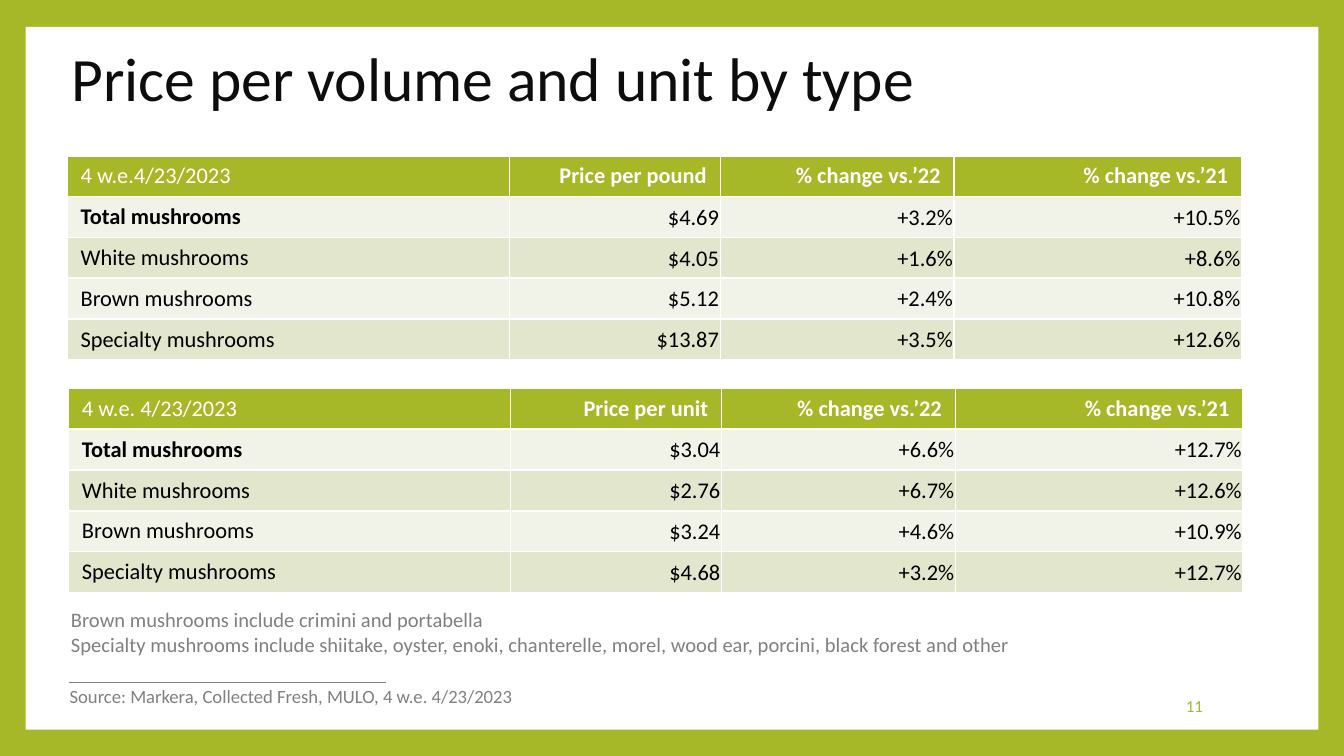
"""Build the slide comparing mushroom prices per pound and per unit."""
import pptx
import pptx.util
import pptx.dml.color
import pptx.enum.shapes
import pptx.enum.text
import pptx.oxml
import pptx.oxml.ns

Inches, Pt = pptx.util.Inches, pptx.util.Pt
ALIGN, ANCHOR = pptx.enum.text.PP_ALIGN, pptx.enum.text.MSO_ANCHOR
AUTO_SIZE = pptx.enum.text.MSO_AUTO_SIZE

THEME = {
    "font": "Calibri",
    "green": "A6B727", "white": "FFFFFF", "black": "000000",
    "ink": "0D0D0D", "gray": "808080", "bands": ("F1F3E8", "E1E6CD"),
    "title": 33, "table": 12, "note": 11, "source": 10, "number": 9,
}

TITLE = "Price per volume and unit by type"
CHANGES = ["% change vs.’22", "% change vs.’21"]
TABLES = [
    (0.5, 1.16, [
        ["4 w.e.4/23/2023", "Price per pound", *CHANGES],
        ["Total mushrooms", "$4.69", "+3.2%", "+10.5%"],
        ["White mushrooms", "$4.05", "+1.6%", "+8.6%"],
        ["Brown mushrooms", "$5.12", "+2.4%", "+10.8%"],
        ["Specialty mushrooms", "$13.87", "+3.5%", "+12.6%"],
    ]),
    (0.51, 2.89, [
        ["4 w.e. 4/23/2023", "Price per unit", *CHANGES],
        ["Total mushrooms", "$3.04", "+6.6%", "+12.7%"],
        ["White mushrooms", "$2.76", "+6.7%", "+12.6%"],
        ["Brown mushrooms", "$3.24", "+4.6%", "+10.9%"],
        ["Specialty mushrooms", "$4.68", "+3.2%", "+12.7%"],
    ]),
]
COLUMNS = [3.29, 1.57, 1.74, 2.14]
ROW_HEIGHT = 0.3
NOTES = [
    "Brown mushrooms include crimini and portabella",
    "Specialty mushrooms include shiitake, oyster, enoki, chanterelle, morel, "
    "wood ear, porcini, black forest and other",
]
SOURCE = "Source: Markera, Collected Fresh, MULO, 4 w.e. 4/23/2023"
PAGE = "11"


def rgb(name):
    return pptx.dml.color.RGBColor.from_string(THEME.get(name, name))


def paint(fill, color):
    fill.solid()
    fill.fore_color.rgb = rgb(color)


def style(p, size, color, align=ALIGN.LEFT, bold=False):
    p.alignment = align
    p.font.name = THEME["font"]
    p.font.size = Pt(THEME[size])
    p.font.bold = bold
    p.font.color.rgb = rgb(color)


def add_text(slide, box, lines, size, color, align=ALIGN.LEFT, wrap=False, anchor=ANCHOR.TOP):
    tf = slide.shapes.add_textbox(*map(Inches, box)).text_frame
    tf.word_wrap = wrap
    tf.auto_size = AUTO_SIZE.NONE if wrap else AUTO_SIZE.SHAPE_TO_FIT_TEXT
    tf.vertical_anchor = anchor
    tf.text = "\n".join(lines)
    for p in tf.paragraphs:
        style(p, size, color, align)


def add_borders(cell):
    tc_pr = cell._tc.get_or_add_tcPr()
    for side in "LRTB":
        tc_pr.append(pptx.oxml.parse_xml(
            f'<a:ln{side} {pptx.oxml.ns.nsdecls("a")} w="{Pt(1)}"><a:solidFill>'
            f'<a:srgbClr val="{THEME["white"]}"/></a:solidFill></a:ln{side}>'))


def add_price_table(slide, left, top, rows):
    table = slide.shapes.add_table(
        len(rows), len(COLUMNS), Inches(left), Inches(top),
        Inches(sum(COLUMNS)), Inches(ROW_HEIGHT * len(rows))).table
    for column, width in zip(table.columns, COLUMNS):
        column.width = Inches(width)
    for i, row in enumerate(rows):
        for j, text in enumerate(row):
            cell = table.cell(i, j)
            header, label = i == 0, j == 0
            add_borders(cell)
            paint(cell.fill, "green" if header else THEME["bands"][(i - 1) % 2])
            cell.vertical_anchor = ANCHOR.TOP if header else ANCHOR.MIDDLE
            if not header and not label:
                cell.margin_left = cell.margin_right = cell.margin_top = Inches(0.01)
                cell.margin_bottom = 0
            cell.text = text
            style(cell.text_frame.paragraphs[0], "table", "white" if header else "black",
                  ALIGN.LEFT if label else ALIGN.RIGHT,
                  bold=(header and not label) or (i == 1 and label))


def main():
    prs = pptx.Presentation()
    prs.slide_width = Inches(10)
    prs.slide_height = prs.slide_width * 9 // 16
    slide = prs.slides.add_slide(prs.slide_layouts[5])
    paint(slide.background.fill, "green")

    panel = slide.shapes.add_shape(
        pptx.enum.shapes.MSO_SHAPE.RECTANGLE, *map(Inches, (0.19, 0.2, 9.62, 5.23)))
    panel.shadow.inherit = False
    paint(panel.fill, "white")
    panel.line.fill.background()
    slide.shapes._spTree.insert(2, panel._element)

    title = slide.shapes.title
    title.left, title.top, title.width, title.height = map(Inches, (0.43, 0.21, 8.53, 0.79))
    tf = title.text_frame
    tf.text = TITLE
    tf.vertical_anchor = ANCHOR.MIDDLE
    style(tf.paragraphs[0], "title", "ink")
    tf.paragraphs[0].line_spacing = 0.9

    add_text(slide, (7.65, 5.1, 1.4, 0.3), [PAGE], "number", "green",
             ALIGN.RIGHT, wrap=True, anchor=ANCHOR.MIDDLE)

    rule = slide.shapes.add_connector(
        pptx.enum.shapes.MSO_CONNECTOR.STRAIGHT, *map(Inches, (0.51, 5.08, 2.87, 5.08)))
    rule.line.color.rgb = rgb("gray")
    rule.line.width = Pt(0.79)
    rule._element.spPr.append(pptx.oxml.parse_xml(
        f'<a:effectLst {pptx.oxml.ns.nsdecls("a")}/>'))

    for left, top, rows in TABLES:
        add_price_table(slide, left, top, rows)

    add_text(slide, (0.42, 5.05, 3.58, 0.27), [SOURCE], "source", "gray")
    add_text(slide, (0.43, 4.47, 7.36, 0.47), NOTES, "note", "gray")
    prs.save("out.pptx")


if __name__ == "__main__":
    main()
